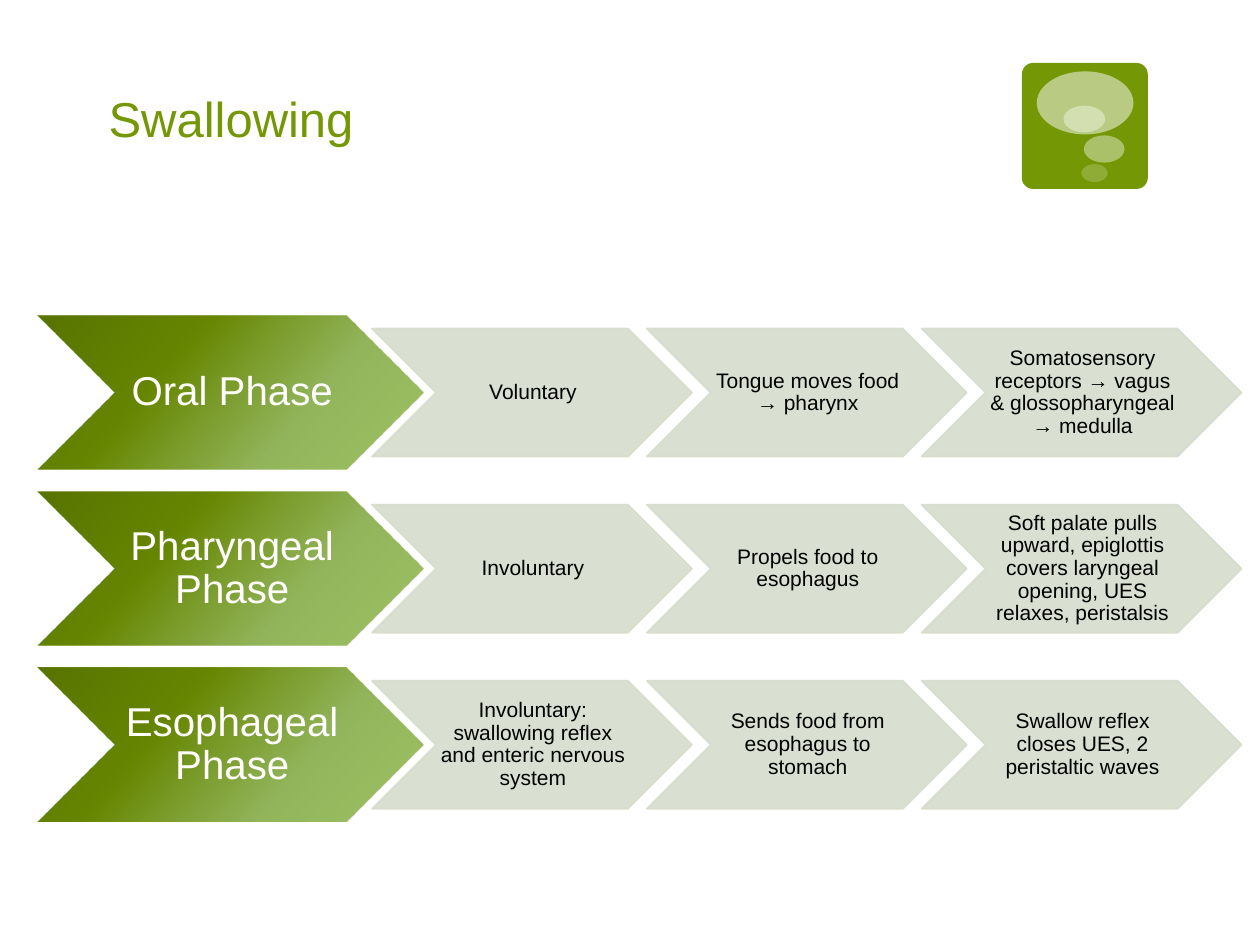
from lxml.etree import SubElement
from pptx import Presentation
from pptx.dml.color import RGBColor
from pptx.enum.shapes import MSO_SHAPE as Shape
from pptx.enum.text import MSO_ANCHOR as Anchor, PP_ALIGN as Align
from pptx.oxml.ns import qn
from pptx.util import Cm, Pt

# Content
TITLE = "Swallowing"
PHASES = [
    ("Oral Phase", [
        "Voluntary",
        "Tongue moves food → pharynx",
        "Somatosensory receptors → vagus & glossopharyngeal → medulla"]),
    ("Pharyngeal Phase", [
        "Involuntary",
        "Propels food to esophagus",
        "Soft palate pulls upward, epiglottis covers laryngeal opening, "
        "UES relaxes, peristalsis"]),
    ("Esophageal Phase", [
        "Involuntary: swallowing reflex and enteric nervous system",
        "Sends food from esophagus to stomach",
        "Swallow reflex closes UES, 2 peristaltic waves"]),
]

# Look: sizes in cm, opacity in percent
GREEN, PALE, WHITE, BLACK = "749805", "D6DDCC", "FFFFFF", "000000"
GRADIENT = [(0, "8FB84C", 85), (33, "8EB153", 95),
            (67, "668600", 100), (100, "587400", 100)]
GRADIENT_ANGLE = 220
BADGE = (20.6, 1.27, 2.54, 2.54)
BUBBLES = [  # left, top, width, height, opacity
    (20.9, 1.44, 1.95, 1.27, 50),
    (21.85, 2.73, 0.82, 0.55, 40),
    (21.8, 3.31, 0.53, 0.36, 20),
    (21.44, 2.13, 0.84, 0.54, 38),
]
TOP, ROW_PITCH = 6.36, 3.55
PHASE_LEFT, PHASE_WIDTH, PHASE_HEIGHT = 0.76, 7.77, 3.11
STEP_LEFT, STEP_PITCH, STEP_WIDTH, STEP_HEIGHT = 7.5, 5.54, 6.45, 2.58


def set_color(color_format, color, opacity=100):
    color_format.rgb = RGBColor.from_string(color)


def set_solid(fill, color, opacity=100):
    fill.solid()
    set_color(fill.fore_color, color)
    if opacity < 100:
        element = fill._xPr.find(qn("a:solidFill"))[0]
        SubElement(element, qn("a:alpha"), val=str(opacity * 1000))


def set_gradient(fill):
    fill.gradient()
    fill.gradient_angle = 360 - GRADIENT_ANGLE
    stops = fill._xPr.find(qn("a:gradFill")).find(qn("a:gsLst"))
    for stop in list(stops):
        stops.remove(stop)
    for position, color, opacity in GRADIENT:
        stop = SubElement(stops, qn("a:gs"), pos=str(position * 1000))
        element = SubElement(stop, qn("a:srgbClr"), val=color)
        SubElement(element, qn("a:alpha"), val=str(opacity * 1000))


def add_shape(slide, kind, left, top, width, height):
    shape = slide.shapes.add_shape(kind, Cm(left), Cm(top), Cm(width), Cm(height))
    shape.shadow.inherit = False
    shape.line.fill.background()
    return shape


def set_text(shape, text, size, color, frame_format, paragraph_format):
    frame = shape.text_frame
    frame.text = text
    paragraph = frame.paragraphs[0]
    for target, values in ((frame, frame_format), (paragraph, paragraph_format),
                           (paragraph.font, {"name": "Arial", "size": Pt(size)})):
        for name, value in values.items():
            setattr(target, name, value)
    set_color(paragraph.font.color, color)


def add_chevron(slide, text, size, color, inset, *box):
    shape = add_shape(slide, Shape.CHEVRON, *box)
    frame_format = {
        "word_wrap": True, "vertical_anchor": Anchor.MIDDLE,
        "margin_left": Cm(2 * inset), "margin_right": 0,
        "margin_top": Cm(inset), "margin_bottom": Cm(inset)}
    set_text(shape, text, size, color, frame_format,
             {"alignment": Align.CENTER, "line_spacing": 0.9})
    return shape


def main():
    presentation = Presentation()
    presentation.slide_width, presentation.slide_height = Cm(25.4), Cm(19.05)
    slide = presentation.slides.add_slide(presentation.slide_layouts[5])

    # Speech bubble badge
    badge = add_shape(slide, Shape.ROUNDED_RECTANGLE, *BADGE)
    badge.adjustments[0] = 0.09
    set_solid(badge.fill, GREEN)
    for *box, opacity in BUBBLES:
        bubble = add_shape(slide, Shape.OVAL, *box)
        set_solid(bubble.fill, WHITE, opacity)

    # Title
    title = slide.shapes.title
    title.left, title.top, title.width, title.height = map(
        Cm, (2.06, 0.64, 13.34, 2.46))
    set_text(title, TITLE, 28, GREEN, {
        "word_wrap": True, "vertical_anchor": Anchor.BOTTOM,
        "margin_left": Cm(0.13), "margin_right": Cm(0.25),
        "margin_top": Cm(0.13), "margin_bottom": Cm(0.13),
    }, {"alignment": Align.LEFT})

    # One row per phase, its steps centred on the phase chevron
    for row, (phase, steps) in enumerate(PHASES):
        top = TOP + row * ROW_PITCH
        chevron = add_chevron(slide, phase, 23, WHITE, 0.04,
                              PHASE_LEFT, top, PHASE_WIDTH, PHASE_HEIGHT)
        set_gradient(chevron.fill)
        step_top = top + (PHASE_HEIGHT - STEP_HEIGHT) / 2
        for column, step in enumerate(steps):
            chevron = add_chevron(slide, step, 12, BLACK, 0.02,
                                  STEP_LEFT + column * STEP_PITCH, step_top,
                                  STEP_WIDTH, STEP_HEIGHT)
            set_solid(chevron.fill, PALE, 90)
            set_solid(chevron.line.fill, PALE, 90)
            chevron.line.width = Pt(1)

    presentation.save("out.pptx")


if __name__ == "__main__":
    main()
